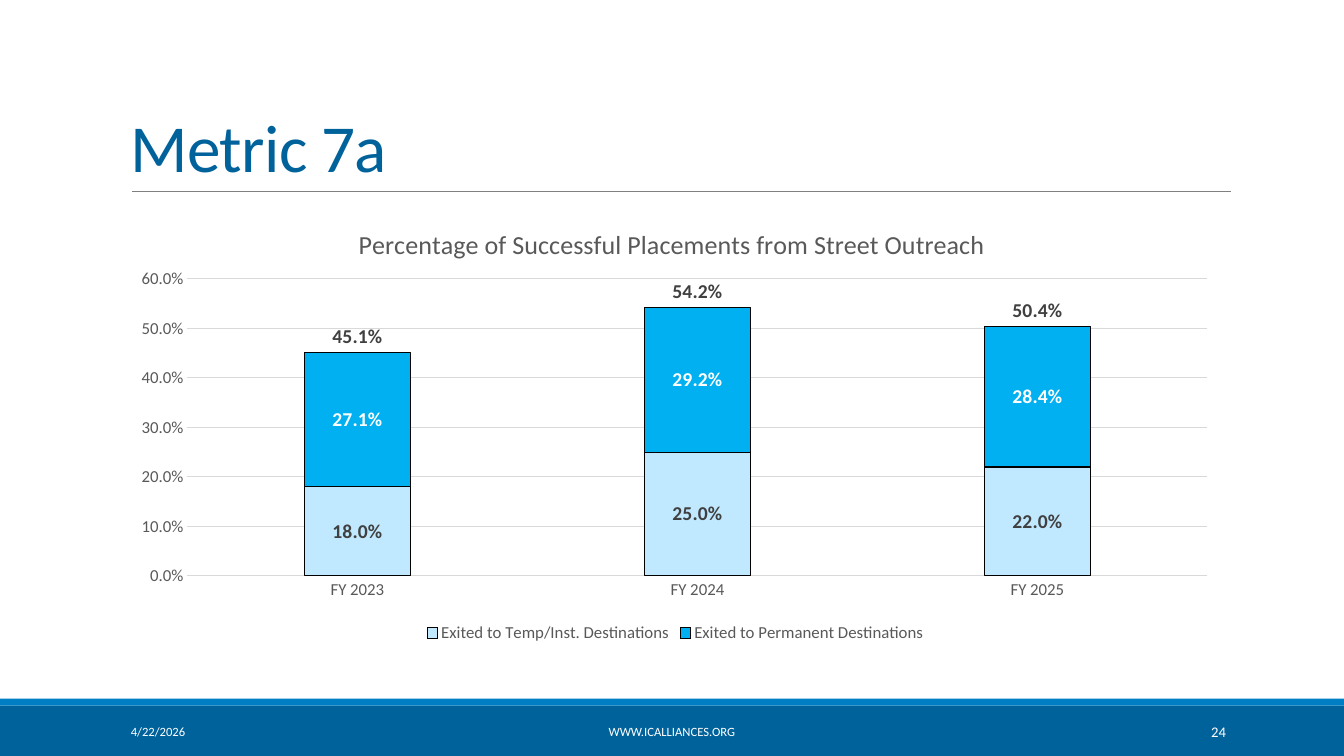
import pptx
import pptx.chart.data
import pptx.dml.color
import pptx.enum.chart
import pptx.enum.shapes
import pptx.enum.text
import pptx.oxml
import pptx.oxml.ns
import pptx.util

Pt = pptx.util.Pt
RGBColor = pptx.dml.color.RGBColor
Align = pptx.enum.text.PP_ALIGN
Anchor = pptx.enum.text.MSO_ANCHOR
ChartType = pptx.enum.chart.XL_CHART_TYPE
LabelPosition = pptx.enum.chart.XL_LABEL_POSITION
qn = pptx.oxml.ns.qn

NAVY = RGBColor(0x00, 0x62, 0x9B)
BLUE = RGBColor(0x00, 0x7E, 0xC4)
SKY = RGBColor(0x00, 0xB0, 0xF0)
PALE = RGBColor(0xC0, 0xE9, 0xFF)
WHITE = RGBColor(0xFF, 0xFF, 0xFF)
BLACK = RGBColor(0x00, 0x00, 0x00)
DARK = RGBColor(0x40, 0x40, 0x40)
GREY = RGBColor(0x59, 0x59, 0x59)
RULE = RGBColor(0x80, 0x80, 0x80)
GRID = RGBColor(0xD9, 0xD9, 0xD9)

PERCENT = "0.0%"
YEARS = ["FY 2023", "FY 2024", "FY 2025"]
# name, values, fill, label colour
BARS = [
    ("Exited to Temp/Inst. Destinations", (0.18, 0.25, 0.22), PALE, DARK),
    ("Exited to Permanent Destinations", (0.271, 0.292, 0.284), SKY, WHITE),
]
TOTALS = ("Series 3", (0.451, 0.542, 0.504))


def element(tag, **attributes):
    """Make one XML element such as c:marker."""
    node = pptx.oxml.parse_xml(f"<{tag} {pptx.oxml.ns.nsdecls(tag.split(':')[0])}/>")
    for name, value in attributes.items():
        node.set(name, str(value))
    return node


def assign(target, values):
    for name, value in values.items():
        setattr(target, name, value)


class SlideBuilder:
    font_name = "Calibri"

    def __init__(self, page):
        self.page = page

    def style_font(self, font, size, color, bold=False):
        assign(font, {"name": self.font_name, "size": Pt(size), "bold": bold})
        font.color.rgb = color

    def style_line(self, line, color, width):
        line.color.rgb = color
        line.width = Pt(width)

    def band(self, top, height, color):
        shape = self.page.shapes.add_shape(
            pptx.enum.shapes.MSO_SHAPE.RECTANGLE, Pt(0), Pt(top), Pt(960), Pt(height))
        shape.shadow.inherit = False
        shape.fill.solid()
        shape.fill.fore_color.rgb = color
        shape.line.fill.background()

    def rule(self, left, right, top):
        line = self.page.shapes.add_connector(
            pptx.enum.shapes.MSO_CONNECTOR.STRAIGHT, Pt(left), Pt(top), Pt(right), Pt(top))
        self.style_line(line.line, RULE, 0.5)
        line._element.spPr.append(element("a:effectLst"))

    def text(self, words, place, size, color, align=Align.LEFT,
             anchor=Anchor.MIDDLE, line_spacing=1.0, tracking=0):
        box = self.page.shapes.add_textbox(*map(Pt, place))
        assign(box.text_frame, {"word_wrap": True, "vertical_anchor": anchor})
        para = box.text_frame.paragraphs[0]
        assign(para, {"alignment": align, "line_spacing": line_spacing})
        span = para.add_run()
        span.text = words
        self.style_font(span.font, size, color)
        if tracking:
            span._r.get_or_add_rPr().set("spc", str(tracking))

    def labels(self, series, color, position):
        labels = series.data_labels
        assign(labels, {"show_value": True, "number_format": PERCENT,
                        "number_format_is_linked": False, "position": position})
        self.style_font(labels.font, 14, color, bold=True)

    def layout(self, parent, inner=False, **fractions):
        """Place a chart part by fractions of the chart area."""
        layout = parent.find(qn("c:layout"))
        if layout is None:
            layout = element("c:layout")
            if inner:
                parent.insert(0, layout)
            else:
                parent.find(qn("c:tx")).addnext(layout)
        manual = element("c:manualLayout")
        layout.append(manual)
        if inner:
            manual.append(element("c:layoutTarget", val="inner"))
        for side in ("x", "y"):
            manual.append(element(f"c:{side}Mode", val="edge"))
        for side, value in fractions.items():
            manual.append(element(f"c:{side}", val=value))

    def move_last_series_to_line(self, chart):
        bars = chart._chartSpace.find(".//" + qn("c:barChart"))
        totals = bars.findall(qn("c:ser"))[-1]
        for bar_only in totals.findall(qn("c:invertIfNegative")):
            totals.remove(bar_only)
        line = element("c:lineChart")
        line.append(element("c:grouping", val="standard"))
        line.append(element("c:varyColors", val=0))
        line.append(totals)
        line.append(element("c:marker", val=1))
        for axis in bars.findall(qn("c:axId")):
            line.append(element("c:axId", val=axis.get("val")))
        bars.addnext(line)

    def axes(self, chart):
        for axis in (chart.category_axis, chart.value_axis):
            axis.major_tick_mark = pptx.enum.chart.XL_TICK_MARK.NONE
            self.style_font(axis.tick_labels.font, 12, GREY)
        self.style_line(chart.category_axis.format.line, GRID, 0.75)
        values = chart.value_axis
        assign(values, {"minimum_scale": 0, "maximum_scale": 0.6,
                        "major_unit": 0.1, "has_major_gridlines": True})
        assign(values.tick_labels, {"number_format": PERCENT,
                                    "number_format_is_linked": False})
        values.format.line.fill.background()
        self.style_line(values.major_gridlines.format.line, GRID, 0.75)

    def legend(self, chart, hidden):
        chart.has_legend = True
        legend = chart.legend
        assign(legend, {"position": pptx.enum.chart.XL_LEGEND_POSITION.BOTTOM,
                        "include_in_layout": False})
        self.style_font(legend.font, 12, GREY)
        entry = element("c:legendEntry")
        entry.append(element("c:idx", val=hidden))
        entry.append(element("c:delete", val=1))
        legend._element.find(qn("c:legendPos")).addnext(entry)

    def chart(self, title, place):
        data = pptx.chart.data.CategoryChartData(number_format=PERCENT)
        data.categories = YEARS
        for name, values, *_ in BARS + [TOTALS]:
            data.add_series(name, values)
        chart = self.page.shapes.add_chart(
            ChartType.COLUMN_STACKED, *map(Pt, place), data).chart
        self.style_font(chart.font, 10, BLACK)
        self.move_last_series_to_line(chart)
        self.axes(chart)
        self.legend(chart, hidden=len(BARS))

        # Title and plot area
        chart.has_title = True
        span = chart.chart_title.text_frame.paragraphs[0].add_run()
        span.text = title
        self.style_font(span.font, 18.6, GREY)
        self.layout(chart.chart_title._element, x=0.21, y=0.04)
        self.layout(chart._chartSpace.find(".//" + qn("c:plotArea")), inner=True,
                    x=0.06, y=0.17, w=0.92, h=0.67)

        # Stacked columns, with an unseen line that carries the totals
        columns, line = chart.plots
        assign(columns, {"gap_width": 219, "overlap": 100, "vary_by_categories": False})
        for series, (_, _, fill, label) in zip(columns.series, BARS):
            series.format.fill.solid()
            series.format.fill.fore_color.rgb = fill
            self.style_line(series.format.line, BLACK, 0.75)
            self.labels(series, label, LabelPosition.CENTER)
        totals = line.series[0]
        totals.smooth = False
        totals.format.line.fill.background()
        totals.marker.style = pptx.enum.chart.XL_MARKER_STYLE.NONE
        self.labels(totals, DARK, LabelPosition.ABOVE)


def main():
    deck = pptx.Presentation()
    assign(deck, {"slide_width": Pt(960), "slide_height": Pt(540)})
    slide = SlideBuilder(deck.slides.add_slide(deck.slide_layouts[6]))

    # Footer bands and title rule
    slide.band(504, 36, NAVY)
    slide.band(499, 5, BLUE)
    slide.rule(94.3, 879, 136.6)

    # Title and footer texts
    slide.text("Metric 7a", (86.4, 22.3, 792, 114.5), 48, NAVY,
               anchor=Anchor.BOTTOM, line_spacing=0.85, tracking=-50)
    slide.text("4/22/2026", (86.4, 508.3, 194.4, 28.8), 9, WHITE)
    slide.text("WWW.ICALLIANCES.ORG", (290.2, 508.3, 379.4, 28.8), 9, WHITE, Align.CENTER)
    slide.text("24", (779.8, 508.3, 103, 28.8), 10.5, WHITE, Align.RIGHT)

    # Placement chart
    slide.chart("Percentage of Successful Placements from Street Outreach",
                (86.4, 145.4, 792, 316.8))
    deck.save("out.pptx")


if __name__ == "__main__":
    main()
